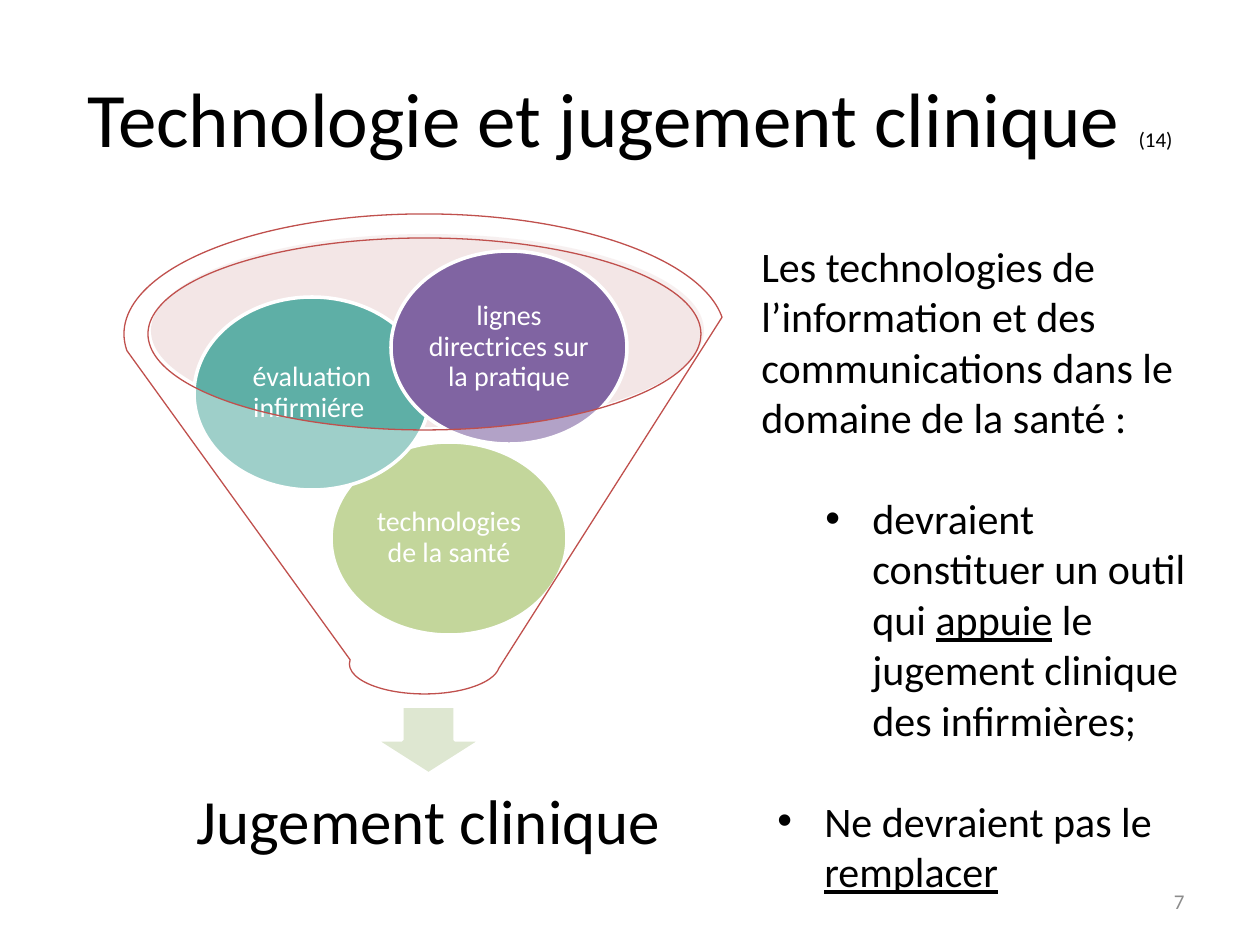
from dataclasses import dataclass

from lxml import etree
from pptx import Presentation
from pptx import util as u
from pptx.dml.color import RGBColor
from pptx.enum import shapes, text
from pptx.oxml import ns

PX = 914400 / 126
SHAPE = shapes.MSO_SHAPE
ALIGN = text.PP_ALIGN


@dataclass(frozen=True)
class Theme:
    """Colours, font and type sizes of the slide."""
    font: str = "Calibri"
    ink: str = "000000"
    white: str = "FFFFFF"
    grey: str = "8C8C8C"
    rim: str = "C0504D"
    mouth: str = "E2C2C2"
    arrow: str = "DEE7D1"
    green: str = "9BBB59"
    teal: str = "5EAFA6"
    purple: str = "8064A2"
    title: int = 44
    result: int = 36
    body: int = 24
    factor: int = 16
    small: int = 12


THEME = Theme()


def px(*lengths):
    """Turn px lengths into EMU."""
    return [u.Emu(round(length * PX)) for length in lengths]


def within(box, left, top, width, height):
    """Shift a relative box into the box that holds it."""
    return box[0] + left, box[1] + top, width, height


def add_runs(paragraph, runs, size, color):
    """Add (text, changes) runs in the theme font."""
    for words, changes in runs:
        run = paragraph.add_run()
        run.text = words
        run.font.name = THEME.font
        run.font.size = u.Pt(changes.get("size", size))
        run.font.underline = changes.get("underline")
        run.font.color.rgb = RGBColor.from_string(color)


def add_frame(parent, box, inset=None, anchor=text.MSO_ANCHOR.MIDDLE):
    """Add a wrapping text box and return its frame."""
    frame = parent.add_textbox(*px(*box)).text_frame
    frame.word_wrap = True
    frame.vertical_anchor = anchor
    if inset is not None:
        margin, = px(inset)
        frame.margin_left = frame.margin_right = margin
        frame.margin_top = frame.margin_bottom = margin
    return frame


def add_label(parent, box, runs, size, color, align=ALIGN.CENTER, inset=None, spacing=None):
    """Add a one-paragraph text box."""
    paragraph = add_frame(parent, box, inset).paragraphs[0]
    paragraph.alignment = align
    paragraph.line_spacing = spacing
    add_runs(paragraph, runs, size, color)


def add_figure(parent, kind, box, fill, line=None, weight=2, opacity=None):
    """Add a filled preset shape with an optional outline."""
    figure = parent.add_shape(kind, *px(*box))
    figure.shadow.inherit = False
    figure.fill.solid()
    figure.fill.fore_color.rgb = RGBColor.from_string(fill)
    if opacity is not None:
        color = figure.fill._xPr.find(".//" + ns.qn("a:srgbClr"))
        etree.SubElement(color, ns.qn("a:alpha")).set("val", str(opacity * 1000))
    if line:
        figure.line.color.rgb = RGBColor.from_string(line)
        figure.line.width = u.Pt(weight)
    else:
        figure.line.fill.background()


def add_factor(parent, box, words, fill):
    """Add one ball of the funnel with its label."""
    add_figure(parent, SHAPE.OVAL, box, fill, THEME.white)
    add_label(parent, within(box, 35, 28, 166, 136), [(words, {})],
              THEME.factor, THEME.white, inset=3, spacing=0.9)


def add_funnel(slide, box):
    """Draw the funnel, its factors and the result below."""
    group = slide.shapes.add_group_shape().shapes
    add_figure(group, SHAPE.OVAL, within(box, 36, 20, 553, 193), THEME.mouth, opacity=40)
    add_figure(group, SHAPE.DOWN_ARROW, within(box, 260, 492, 107, 68),
               THEME.arrow, THEME.white)
    add_label(group, within(box, 0, 546, 627, 129), [("Jugement clinique", {})],
              THEME.result, THEME.ink, inset=35, spacing=0.9)
    factors = [
        (216, 228, "technologies de la santé", THEME.green),
        (79, 83, "évaluation infirmiére ", THEME.teal),
        (276, 37, "lignes directrices sur la pratique", THEME.purple),
    ]
    for left, top, words, fill in factors:
        add_factor(group, within(box, left, top, 236, 193), words, fill)
    add_figure(group, SHAPE.FUNNEL, within(box, 9, 0, 601, 480), THEME.white,
               THEME.rim, 0.75, 40)


def add_bullet(paragraph, margin, hanging):
    """Give a paragraph a hanging round bullet."""
    left, indent = px(margin, -hanging)
    properties = paragraph._p.get_or_add_pPr()
    properties.set("marL", str(left))
    properties.set("indent", str(indent))
    etree.SubElement(properties, ns.qn("a:buFont")).set("typeface", "Arial")
    etree.SubElement(properties, ns.qn("a:buChar")).set("char", "•")


def add_statement(slide, box):
    """Write the introduction and its two bullets."""
    frame = add_frame(slide.shapes, box, anchor=text.MSO_ANCHOR.TOP)
    add_runs(frame.paragraphs[0], [
        ("Les technologies de l’information et des communications "
         "dans le domaine de la santé :", {})], THEME.body, THEME.ink)
    underlined = {"underline": True}
    bullets = [
        (111, [("devraient constituer un outil qui ", {}), ("appuie", underlined),
               (" le jugement clinique des infirmières;", {})]),
        (63, [("Ne devraient pas le ", {}), ("remplacer", underlined)]),
    ]
    for margin, runs in bullets:
        paragraph = frame.add_paragraph()
        paragraph.level = 1
        add_bullet(paragraph, margin, 47)
        paragraph.space_before = u.Pt(29)
        add_runs(paragraph, runs, THEME.body, THEME.ink)


def main():
    """Build and save the slide."""
    deck = Presentation()
    deck.slide_width, deck.slide_height = px(1260, 945)
    slide = deck.slides.add_slide(deck.slide_layouts[6])
    add_label(slide.shapes, (63, 38, 1134, 157),
              [("Technologie et jugement clinique ", {}), ("(14)", {"size": THEME.small})],
              THEME.title, THEME.ink)
    add_label(slide.shapes, (903, 876, 294, 50), [("7", {})],
              THEME.small, THEME.grey, ALIGN.RIGHT)
    add_funnel(slide, (115, 214, 627, 675))
    add_statement(slide, (749, 234, 456, 712))
    deck.save("out.pptx")


if __name__ == "__main__":
    main()
